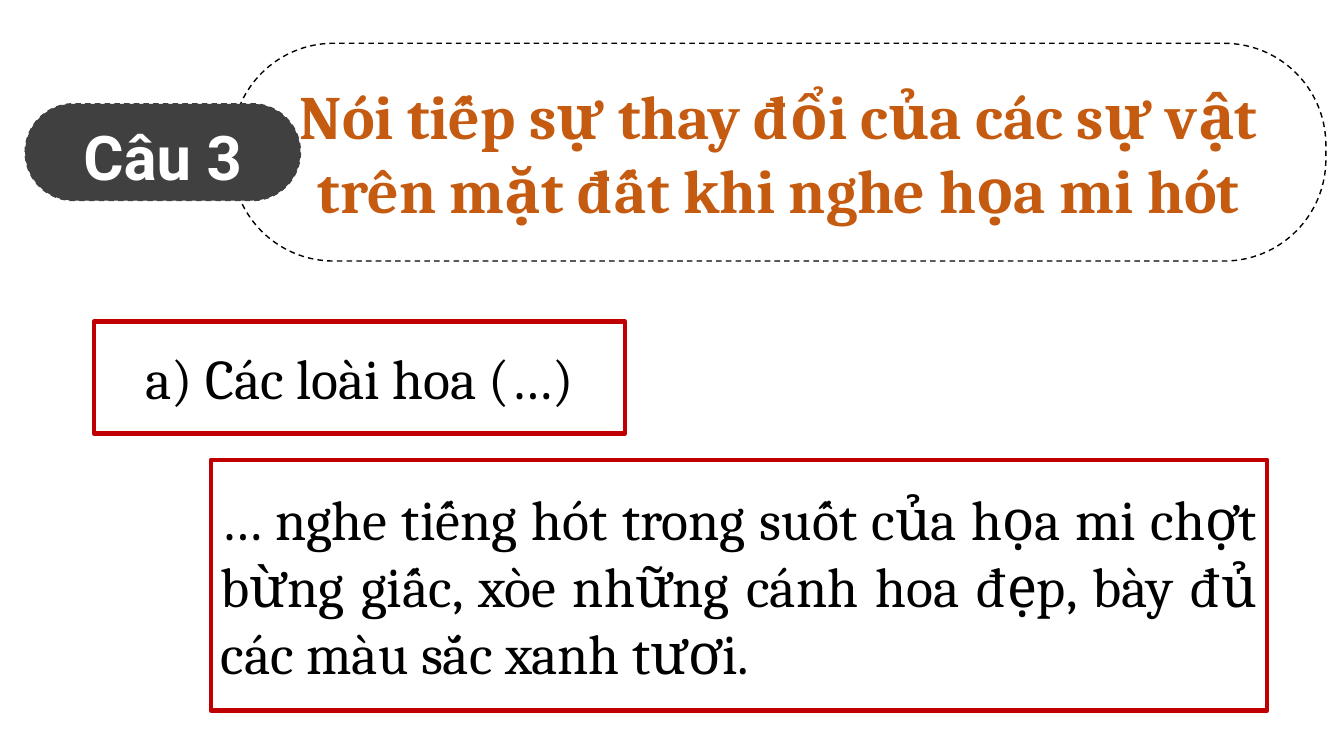
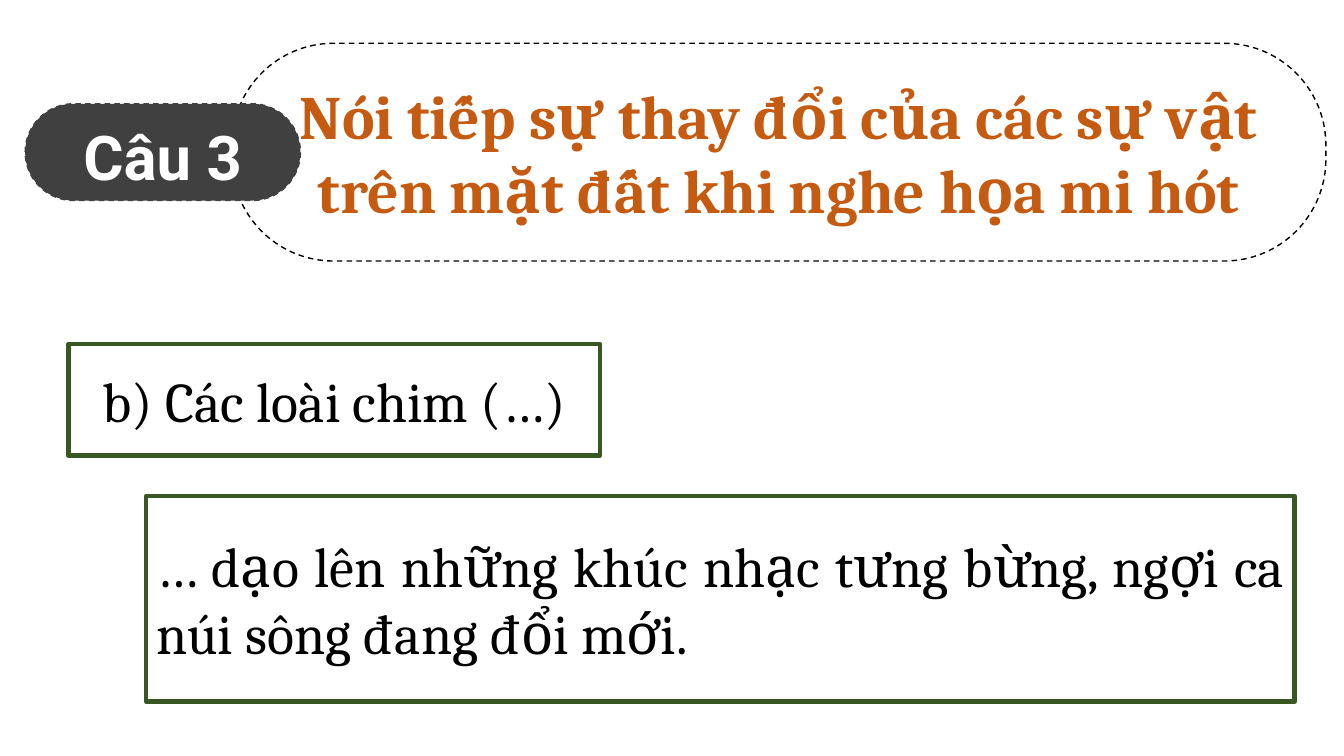
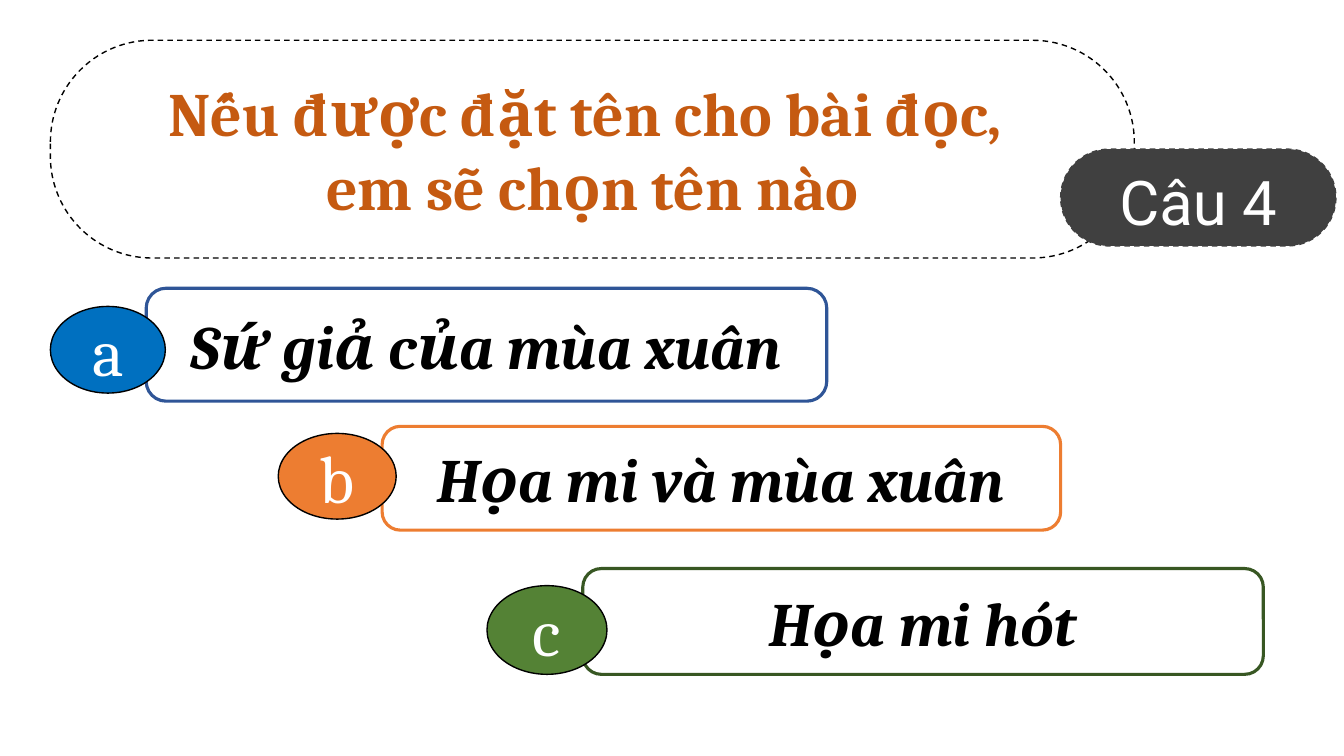
from pptx import Presentation
from pptx.dml.color import RGBColor
from pptx.enum.dml import MSO_LINE
from pptx.enum.shapes import MSO_SHAPE
from pptx.enum.text import MSO_ANCHOR, MSO_AUTO_SIZE, PP_ALIGN
from pptx.util import Inches, Pt

SERIF, SANS = "Cambria", "Roboto"
BLACK, WHITE, CHARCOAL = "000000", "FFFFFF", "404040"
RUST, RED, DARK_GREEN = "C55A11", "C00000", "385723"
HEADING_HEIGHT = 2.16
HEADING_MARGIN = 0.4
BADGE_SIZE = (2.73, 0.96)


def color(hex_string):
    return RGBColor.from_string(hex_string)


def write(shape, text, size, font=SERIF, text_color=BLACK, bold=False,
          italic=False, align=PP_ALIGN.CENTER, spacing=1.0):
    frame = shape.text_frame
    frame.word_wrap = True
    frame.auto_size = MSO_AUTO_SIZE.NONE
    frame.vertical_anchor = MSO_ANCHOR.MIDDLE
    frame.text = text
    for paragraph in frame.paragraphs:
        paragraph.alignment = align
        paragraph.line_spacing = spacing
        paragraph.font.name = font
        paragraph.font.size = Pt(size)
        paragraph.font.bold = bold
        paragraph.font.italic = italic
        paragraph.font.color.rgb = color(text_color)


def add_box(shapes, kind, box, line, width, fill=None, dashed=False, radius=None):
    shape = shapes.add_shape(kind, *map(Inches, box))
    shape.shadow.inherit = False
    if fill:
        shape.fill.solid()
        shape.fill.fore_color.rgb = color(fill)
    else:
        shape.fill.background()
    shape.line.color.rgb = color(line)
    shape.line.width = Pt(width)
    if dashed:
        shape.line.dash_style = MSO_LINE.DASH
    if radius is not None:
        shape.adjustments[0] = radius
    return shape


def add_question_slide(presentation, heading, heading_box, badge, badge_at, badge_bold):
    """Add a slide with a dashed heading capsule and a question badge."""
    slide = presentation.slides.add_slide(presentation.slide_layouts[5])
    title = slide.shapes.title
    title.left, title.top, title.width, title.height = map(Inches, heading_box)
    write(title, heading, 44, text_color=RUST, bold=True)
    title.text_frame.margin_left = title.text_frame.margin_right = Inches(HEADING_MARGIN)
    add_box(slide.shapes, MSO_SHAPE.ROUNDED_RECTANGLE, heading_box, BLACK, 1,
            dashed=True, radius=0.467)
    capsule = add_box(slide.shapes, MSO_SHAPE.ROUNDED_RECTANGLE, (*badge_at, *BADGE_SIZE),
                      CHARCOAL, 1, fill=CHARCOAL, dashed=True, radius=0.5)
    write(capsule, badge, 44, font=SANS, text_color=WHITE, bold=badge_bold, spacing=1.1)
    return slide


def add_completion_slide(presentation, prompt, prompt_at, answer, answer_box, line):
    """Add a question 3 slide: a prompt box and the answer that completes it."""
    slide = add_question_slide(
        presentation, "Nói tiếp sự thay đổi của các sự vật trên mặt đất khi nghe họa mi hót",
        (2.3, 0.43, 10.85, HEADING_HEIGHT), "Câu 3", (0.25, 1.03), True)
    for text, box, align in (
        (prompt, (*prompt_at, 5.27, 1.11), PP_ALIGN.CENTER),
        (answer, answer_box, PP_ALIGN.JUSTIFY),
    ):
        shape = add_box(slide.shapes, MSO_SHAPE.RECTANGLE, box, line, 3, fill=WHITE)
        write(shape, text, 40, align=align)


def add_option(slide, letter, text, bar_box, oval_box, line, fill):
    """Add one answer option: a text bar with a lettered oval, grouped."""
    shapes = slide.shapes.add_group_shape().shapes
    bar = add_box(shapes, MSO_SHAPE.ROUNDED_RECTANGLE, bar_box, line, 2.25,
                  fill=WHITE, radius=0.176)
    write(bar, text, 44, bold=True, italic=True)
    oval = add_box(shapes, MSO_SHAPE.OVAL, oval_box, BLACK, 1, fill=fill)
    write(oval, letter, 48, text_color=WHITE)


def add_choice_slide(presentation):
    slide = add_question_slide(
        presentation, "Nếu được đặt tên cho bài đọc, \nem sẽ chọn tên nào",
        (0.5, 0.4, 10.75, HEADING_HEIGHT), "Câu 4", (10.52, 1.48), False)
    options = (
        ("a", "Sứ giả của mùa xuân", (1.45, 2.86, 6.75, 1.12),
         (0.5, 3.04, 1.14, 0.86), "2F5597", "0070C0"),
        ("b", "Họa mi và mùa xuân", (3.79, 4.23, 6.73, 1.03),
         (2.76, 4.3, 1.17, 0.85), "ED7D31", "ED7D31"),
        ("c", "Họa mi hót", (5.78, 5.64, 6.75, 1.05),
         (4.83, 5.81, 1.19, 0.88), DARK_GREEN, "548235"),
    )
    for option in options:
        add_option(slide, *option)


def main():
    presentation = Presentation()
    presentation.slide_width = Inches(13.33)
    presentation.slide_height = Inches(7.5)
    add_completion_slide(
        presentation, "a) Các loài hoa (…)", (0.93, 3.19),
        "… nghe tiếng hót trong suốt của họa mi chợt bừng giấc, "
        "xòe những cánh hoa đẹp, bày đủ các màu sắc xanh tươi.",
        (2.09, 4.56, 10.48, 2.49), RED)
    add_completion_slide(
        presentation, "b) Các loài chim (…)", (0.68, 3.41),
        "… dạo lên những khúc nhạc tưng bừng, ngợi ca núi sông đang đổi mới.",
        (1.45, 4.92, 11.39, 2.04), DARK_GREEN)
    add_choice_slide(presentation)
    presentation.save("out.pptx")


if __name__ == "__main__":
    main()
